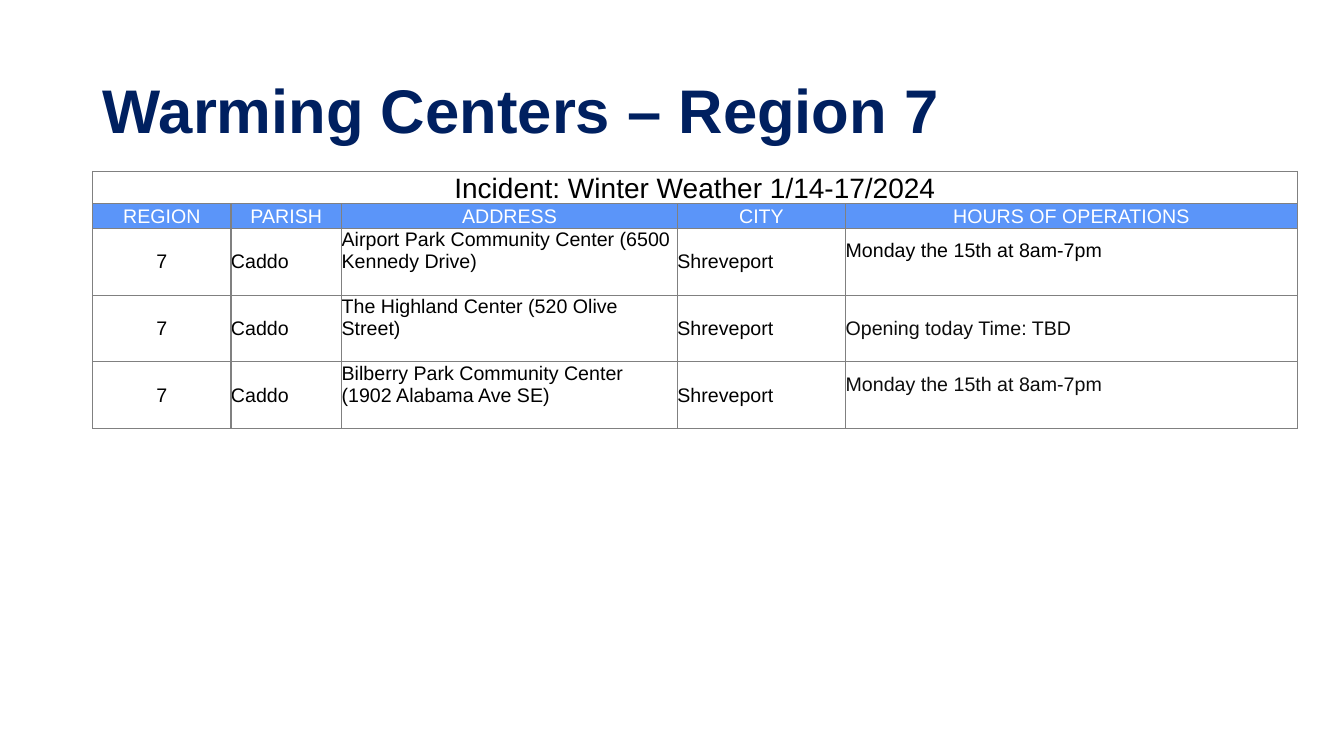
from dataclasses import dataclass

from lxml.etree import SubElement
from pptx import Presentation
from pptx.dml.color import RGBColor
from pptx.enum.text import MSO_ANCHOR, PP_ALIGN
from pptx.oxml.ns import qn
from pptx.util import Cm, Pt

COLORS = {
    "title": "002060",
    "header": "5B95F9",
    "white": "FFFFFF",
    "black": "000000",
    "hours": "0D0D0D",
    "border": "808080",
}
FONT = "Arial"
HEADER_INSET = 0.03
LIFT = 0.55  # bottom margin that raises a text by half a line


@dataclass
class CellStyle:
    size: int = 14
    color: str = "black"
    fill: str = "white"
    align: PP_ALIGN = PP_ALIGN.LEFT
    inset: float = 0
    bottom: float = 0


@dataclass
class Center:
    address: str
    hours: str
    hours_color: str = "hours"
    hours_bottom: float = LIFT
    region: str = "7"
    parish: str = "Caddo"
    city: str = "Shreveport"


COLUMNS = {
    "REGION": 3.48,
    "PARISH": 2.79,
    "ADDRESS": 8.46,
    "CITY": 4.24,
    "HOURS OF OPERATIONS": 11.38,
}
CENTERS = [
    Center("Airport Park Community Center (6500 Kennedy Drive)",
           "Monday the 15th at 8am-7pm", hours_color="black"),
    Center("The Highland Center (520 Olive Street)",
           "Opening today Time: TBD", hours_bottom=0),
    Center("Bilberry Park Community Center (1902 Alabama Ave SE)",
           "Monday the 15th at 8am-7pm"),
]
ROW_HEIGHTS = [0.81, 0.62] + [1.68] * len(CENTERS)

INCIDENT = CellStyle(size=20, align=PP_ALIGN.CENTER, inset=HEADER_INSET)
HEADER = CellStyle(color="white", fill="header", align=PP_ALIGN.CENTER, inset=HEADER_INSET)
CENTERED = CellStyle(align=PP_ALIGN.CENTER)
PLAIN = CellStyle()
LIFTED = CellStyle(bottom=LIFT)


def rgb(name: str) -> RGBColor:
    return RGBColor.from_string(COLORS[name])


def add_borders(cell) -> None:
    properties = cell._tc.get_or_add_tcPr()
    for side in ("a:lnL", "a:lnR", "a:lnT", "a:lnB"):
        line = SubElement(properties, qn(side), w=str(Pt(1)))
        fill = SubElement(line, qn("a:solidFill"))
        SubElement(fill, qn("a:srgbClr"), val=COLORS["border"])


def write_cell(cell, text: str, style: CellStyle) -> None:
    cell.fill.solid()
    cell.fill.fore_color.rgb = rgb(style.fill)
    cell.vertical_anchor = MSO_ANCHOR.MIDDLE
    cell.margin_left = cell.margin_right = cell.margin_top = Cm(style.inset)
    cell.margin_bottom = Cm(style.bottom)
    paragraph = cell.text_frame.paragraphs[0]
    paragraph.text = text
    paragraph.alignment = style.align
    paragraph.font.name = FONT
    paragraph.font.size = Pt(style.size)
    paragraph.font.color.rgb = rgb(style.color)


def add_title(slide, text: str) -> None:
    title = slide.shapes.title
    title.left, title.top, title.width, title.height = Cm(2.34), Cm(1.02), Cm(29.21), Cm(3.68)
    title.text_frame.vertical_anchor = MSO_ANCHOR.MIDDLE
    paragraph = title.text_frame.paragraphs[0]
    paragraph.text = text
    paragraph.alignment = PP_ALIGN.LEFT
    paragraph.line_spacing = 0.9
    paragraph.font.name = FONT
    paragraph.font.size = Pt(44)
    paragraph.font.bold = True
    paragraph.font.color.rgb = rgb("title")


def add_centers_table(slide) -> None:
    table = slide.shapes.add_table(
        len(ROW_HEIGHTS), len(COLUMNS), Cm(2.34), Cm(4.32),
        Cm(sum(COLUMNS.values())), Cm(sum(ROW_HEIGHTS))).table
    table.first_row = table.horz_banding = False
    for column, width in zip(table.columns, COLUMNS.values()):
        column.width = Cm(width)
    for row, height in zip(table.rows, ROW_HEIGHTS):
        row.height = Cm(height)
        for cell in row.cells:
            add_borders(cell)

    # Incident line across all columns
    table.cell(0, 0).merge(table.cell(0, len(COLUMNS) - 1))
    write_cell(table.cell(0, 0), "Incident: Winter Weather 1/14-17/2024", INCIDENT)

    # Column headings
    for index, heading in enumerate(COLUMNS):
        write_cell(table.cell(1, index), heading, HEADER)

    # One row for each warming center
    for row_index, center in enumerate(CENTERS, start=2):
        hours_style = CellStyle(color=center.hours_color, bottom=center.hours_bottom)
        entries = [
            (center.region, CENTERED),
            (center.parish, PLAIN),
            (center.address, LIFTED),
            (center.city, PLAIN),
            (center.hours, hours_style),
        ]
        for column_index, (text, style) in enumerate(entries):
            write_cell(table.cell(row_index, column_index), text, style)


def main() -> None:
    presentation = Presentation()
    presentation.slide_width, presentation.slide_height = Cm(33.87), Cm(19.05)
    slide = presentation.slides.add_slide(presentation.slide_layouts.get_by_name("Title Only"))
    add_title(slide, "Warming Centers – Region 7")
    add_centers_table(slide)
    presentation.save("out.pptx")


if __name__ == "__main__":
    main()
